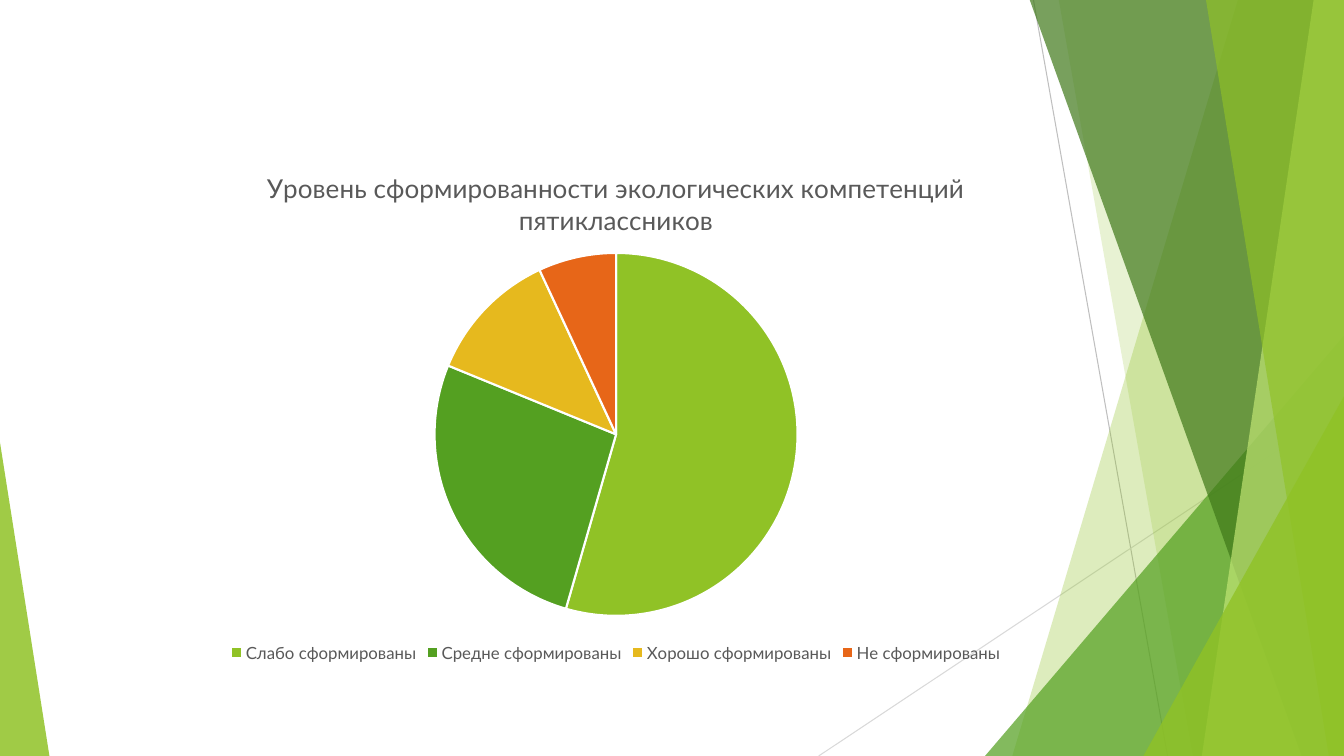
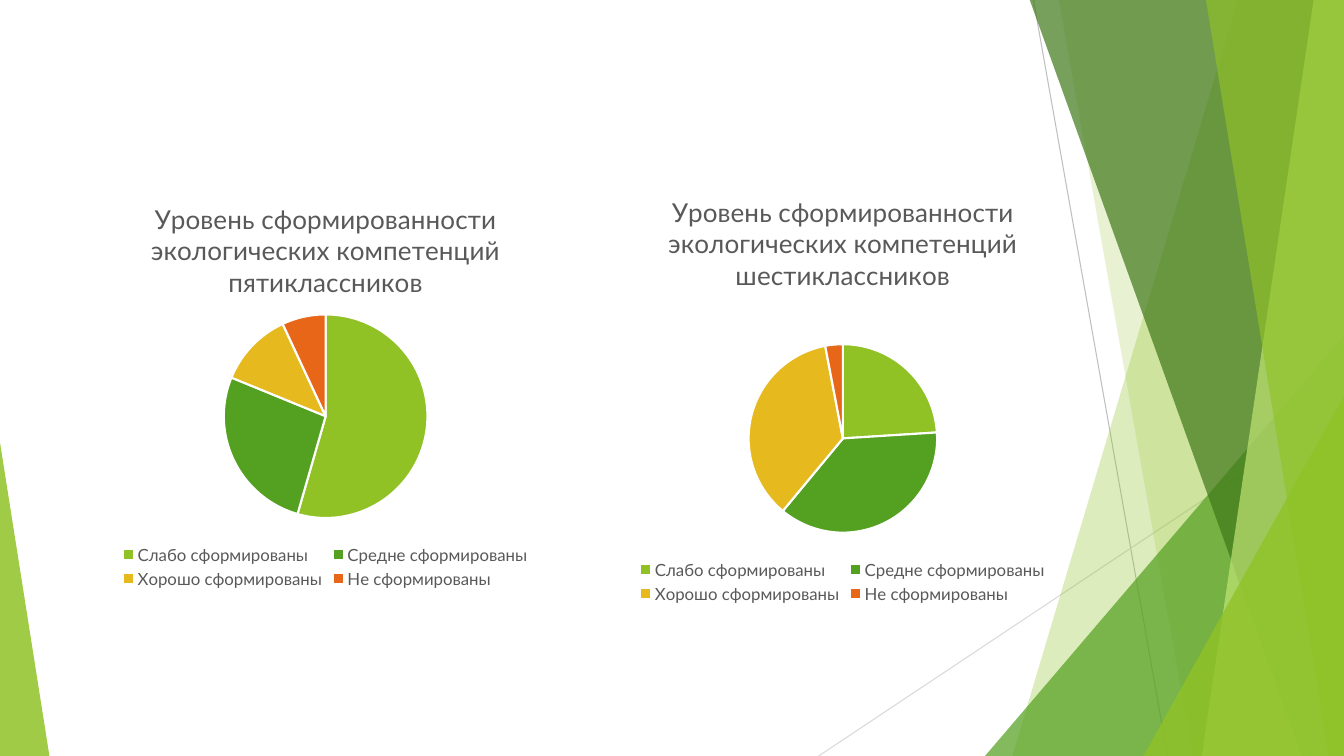
from lxml.etree import SubElement
from pptx import Presentation
from pptx.chart.data import CategoryChartData
from pptx.dml.color import RGBColor
from pptx.enum.chart import XL_CHART_TYPE, XL_LEGEND_POSITION
from pptx.enum.shapes import MSO_CONNECTOR, MSO_SHAPE
from pptx.oxml import parse_xml
from pptx.oxml.ns import nsdecls, qn
from pptx.util import Emu, Pt

PX = 9144
WIDTH, HEIGHT = 1333, 750
BLANK_LAYOUT = 6

LIME, GREEN, DARK_GREEN, PALE_LIME = "90C226", "54A021", "3F7819", "C0E474"
YELLOW, ORANGE, WHITE, GREY = "E6B91E", "E76618", "FFFFFF", "595959"
FONT = "Lato"
BASE_TEXT = {"name": FONT, "size": Pt(10), "bold": False}
TITLE_TEXT = {"name": FONT, "size": Pt(18.6), "bold": False}
LEGEND_TEXT = {"name": FONT, "size": Pt(12), "bold": False}

LEVELS = {
    "Слабо сформированы": LIME,
    "Средне сформированы": GREEN,
    "Хорошо сформированы": YELLOW,
    "Не сформированы": ORANGE,
}
TITLE = "Уровень сформированности экологических компетенций "
FIFTH = (TITLE + "пятиклассников", (55, 27, 12, 7))
SIXTH = (TITLE + "шестиклассников", (24, 37, 36, 3))

LINES = [
    (1025, 0, 1158, 750, "BFBFBF"),
    (1333, 403, 812, 750, "D9D9D9"),
]
BAND, TRIANGLE = "band", "triangle"
DECOR = [
    (BAND, (1228, 1004), LIME, 30),
    (BAND, (1050, 1183), LIME, 20),
    (TRIANGLE, (977, 333, 356, 1), GREEN, 72),
    (BAND, (1021, 1291), DARK_GREEN, 70),
    (BAND, (1303, 1192), PALE_LIME, 70),
    (BAND, (1196, 1318), LIME, 65),
    (TRIANGLE, (1134, 393, 199, 1), LIME, 80),
    (TRIANGLE, (0, 439, 49, 0), LIME, 85),
]


def px(*lengths):
    return [Emu(n * PX) for n in lengths]


def color(hex_string):
    return RGBColor.from_string(hex_string)


def set_font(font, values, hex_string):
    for name, value in values.items():
        setattr(font, name, value)
    font.color.rgb = color(hex_string)


def paint(sp, hex_string, opacity):
    sp.shadow.inherit = False
    sp.fill.solid()
    sp.fill.fore_color.rgb = color(hex_string)
    sp.line.fill.background()
    clr = sp.element.xpath("p:spPr/a:solidFill/a:srgbClr")[0]
    SubElement(clr, qn("a:alpha"), val=str(opacity * 1000))
    return sp


def add_line(s, x1, y1, x2, y2, hex_string):
    line = s.shapes.add_connector(MSO_CONNECTOR.STRAIGHT, *px(x1, y1, x2, y2))
    line.line.color.rgb = color(hex_string)
    line.line.width = Pt(0.75)
    SubElement(line.element.spPr, qn("a:effectLst"))
    return line


def add_band(s, top_x, bottom_x):
    builder = s.shapes.build_freeform(top_x, -1, scale=PX)
    builder.add_line_segments([(WIDTH, -1), (WIDTH, HEIGHT), (bottom_x, HEIGHT)])
    return builder.convert_to_shape()


def add_triangle(s, x, y, width, apex):
    box = px(x, y, width, HEIGHT - y)
    sp = s.shapes.add_shape(MSO_SHAPE.ISOSCELES_TRIANGLE, *box)
    sp.adjustments[0] = apex
    return sp


def decorate_layout(layout, s):
    for placeholder in list(layout.placeholders):
        layout.shapes.element.remove(placeholder.element)
    makers = {BAND: add_band, TRIANGLE: add_triangle}
    shapes = [add_line(s, *line) for line in LINES]
    for kind, geometry, hex_string, opacity in DECOR:
        shapes.append(paint(makers[kind](s, *geometry), hex_string, opacity))
    for sp in shapes:
        layout.shapes.element.append(sp.element)


def place_pie(chart, box, center_x, center_y, diameter):
    x, y, width, height = box
    values = {
        "x": (center_x - diameter / 2 - x) / width,
        "y": (center_y - diameter / 2 - y) / height,
        "w": diameter / width,
        "h": diameter / height,
    }
    modes = '<c:layoutTarget val="inner"/><c:xMode val="edge"/><c:yMode val="edge"/>'
    sizes = "".join(f'<c:{k} val="{v:.4f}"/>' for k, v in values.items())
    plot_area = chart.element.xpath("c:chart/c:plotArea")[0]
    for old in plot_area.findall(qn("c:layout")):
        plot_area.remove(old)
    plot_area.insert(0, parse_xml(
        f'<c:layout {nsdecls("c")}><c:manualLayout>{modes}{sizes}'
        "</c:manualLayout></c:layout>"))


def add_pie(s, survey, box, pie):
    title, values = survey
    data = CategoryChartData()
    data.categories = list(LEVELS)
    data.add_series(title, values)
    chart = s.shapes.add_chart(XL_CHART_TYPE.PIE, *px(*box), data).chart
    set_font(chart.font, BASE_TEXT, "000000")

    chart.has_title = True
    p = chart.chart_title.text_frame.paragraphs[0]
    r = p.add_run()
    r.text = title
    set_font(r.font, TITLE_TEXT, GREY)
    chart.chart_title.include_in_layout = False

    chart.has_legend = True
    chart.legend.position = XL_LEGEND_POSITION.BOTTOM
    chart.legend.include_in_layout = False
    set_font(chart.legend.font, LEGEND_TEXT, GREY)

    plot = chart.plots[0]
    plot.vary_by_categories = True
    for i, hex_string in enumerate(LEVELS.values()):
        slice_format = plot.series[0].points[i].format
        slice_format.fill.solid()
        slice_format.fill.fore_color.rgb = color(hex_string)
        slice_format.line.color.rgb = color(WHITE)
        slice_format.line.width = Pt(1.5)
    place_pie(chart, box, *pie)


def main():
    prs = Presentation()
    prs.slide_width, prs.slide_height = px(WIDTH, HEIGHT)
    layout = prs.slide_layouts[BLANK_LAYOUT]

    s = prs.slides.add_slide(layout)
    decorate_layout(layout, s)
    add_pie(s, FIFTH, (74, 148, 1074, 513), (611, 431, 360))

    s = prs.slides.add_slide(layout)
    add_pie(s, SIXTH, (605, 173, 462, 430), (836, 435, 187))
    add_pie(s, FIFTH, (74, 180, 498, 408), (323, 413, 202))

    prs.save("out.pptx")


if __name__ == "__main__":
    main()
